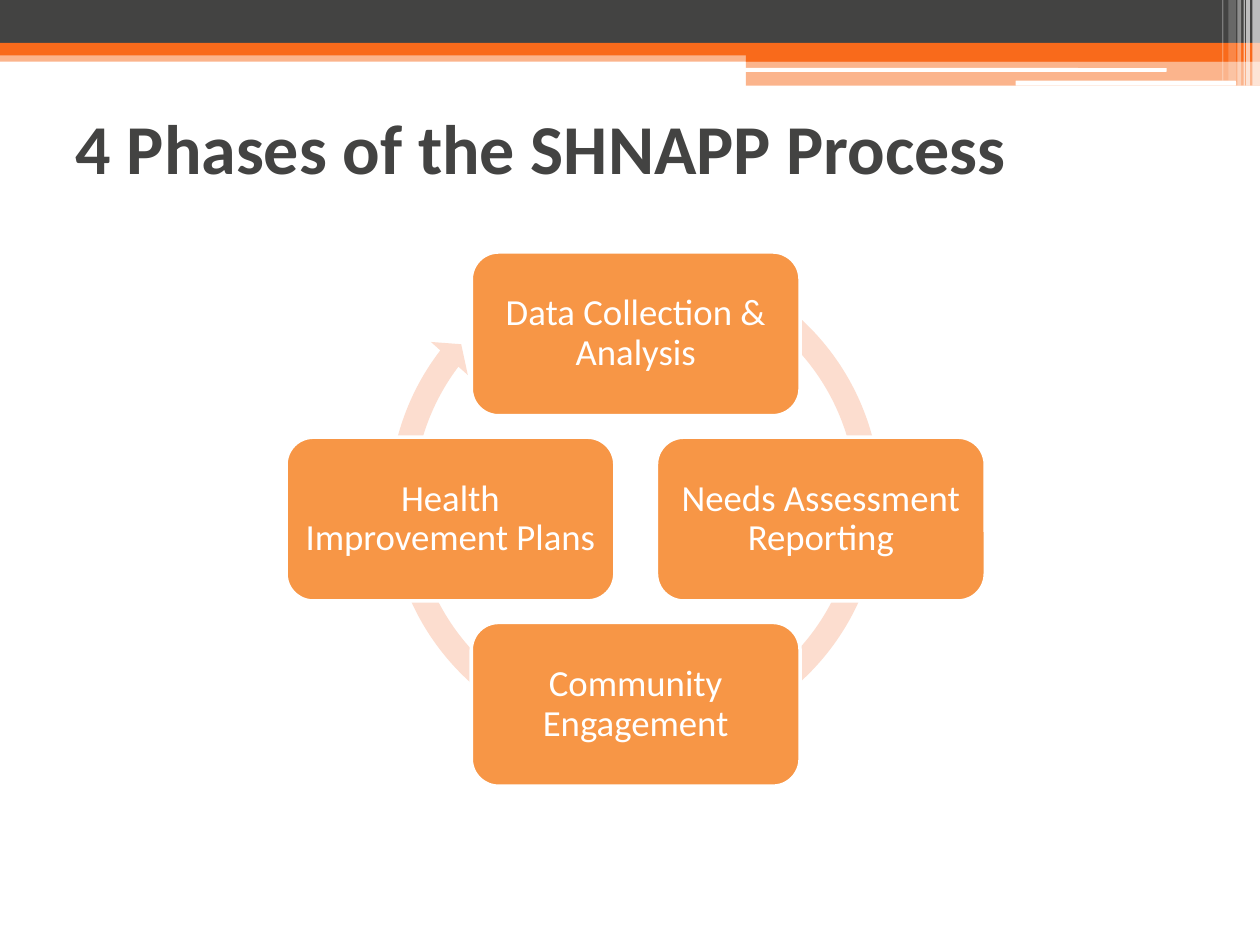
from dataclasses import dataclass

from lxml import etree
from pptx import Presentation
from pptx.dml.color import RGBColor
from pptx.enum.shapes import MSO_SHAPE
from pptx.enum.text import MSO_ANCHOR, PP_ALIGN
from pptx.oxml.ns import qn
from pptx.util import Inches, Pt

RECTANGLE = MSO_SHAPE.RECTANGLE
ROUNDED = MSO_SHAPE.ROUNDED_RECTANGLE
CIRCULAR_ARROW = MSO_SHAPE.CIRCULAR_ARROW
MIDDLE = MSO_ANCHOR.MIDDLE
LEFT, CENTER = PP_ALIGN.LEFT, PP_ALIGN.CENTER


@dataclass(frozen=True)
class Theme:
    font: str = "Calibri"
    dark: str = "434342"
    accent: str = "F96A1B"
    phase: str = "F79646"
    cycle: str = "FCDDCF"
    white: str = "FFFFFF"
    title_size: int = 40
    phase_size: int = 21


theme = Theme()


def color(value):
    return RGBColor.from_string(value)


def add_block(page, kind, place, fill, opacity=100):
    block = page.shapes.add_shape(kind, *[Inches(length) for length in place])
    block.shadow.inherit = False
    block.fill.solid()
    block.fill.fore_color.rgb = color(fill)
    block.line.fill.background()
    if opacity < 100:
        tone = block.fill._xPr.find(qn("a:solidFill"))[0]
        etree.SubElement(tone, qn("a:alpha"), val=str(opacity * 1000))
    return block


deck = Presentation()
deck.slide_width, deck.slide_height = Inches(10), Inches(7.5)
page = deck.slides.add_slide(deck.slide_layouts[5])

header_bands = [
    (RECTANGLE, (0, 0.4, 10, 0.09), theme.accent, 50),
    (RECTANGLE, (0, 0, 10, 0.34), theme.dark, 100),
    (RECTANGLE, (0, 0.34, 10, 0.1), theme.accent, 100),
    (RECTANGLE, (5.92, 0.39, 4.08, 0.1), theme.accent, 100),
    (RECTANGLE, (5.92, 0.48, 4.08, 0.2), theme.accent, 50),
    (ROUNDED, (5.91, 0.54, 3.35, 0.03), theme.white, 100),
    (ROUNDED, (8.06, 0.64, 1.75, 0.04), theme.white, 100),
]
for kind, place, fill, opacity in header_bands:
    add_block(page, kind, place, fill, opacity)

corner_stripes = [
    (9.94, 0.06, 0.68, 65),
    (9.89, 0.03, 0.68, 65),
    (9.87, 0.01, 0.68, 60),
    (9.82, 0.03, 0.68, 40),
    (9.75, 0.06, 0.64, 20),
    (9.7, 0.01, 0.64, 30),
]
for left, width, height, opacity in corner_stripes:
    add_block(page, RECTANGLE, (left, 0, width, height), theme.white, opacity)

title = page.shapes.title
title.left, title.top = Inches(0.5), Inches(0.58)
title.width, title.height = Inches(9), Inches(1.17)
title.text_frame.text = "4 Phases of the SHNAPP Process"
title.text_frame.vertical_anchor = MIDDLE
para = title.text_frame.paragraphs[0]
para.alignment = LEFT
para.font.name = theme.font
para.font.size = Pt(theme.title_size)
para.font.bold = True
para.font.color.rgb = color(theme.dark)

cycle = add_block(page, CIRCULAR_ARROW, (2.99, 1.92, 4.1, 4.1), theme.cycle)
for index, value in enumerate((0.047, 2.729, 130.408, 178.897, 0.048)):
    cycle.adjustments[index] = value

phase_width, phase_height = 2.61, 1.3
center_left, center_top, step = 3.74, 3.47, 1.47
phases = [
    ("Data Collection & Analysis", 0, -1),
    ("Needs Assessment Reporting", 1, 0),
    ("Community Engagement", 0, 1),
    ("Health Improvement Plans", -1, 0),
]
for label, across, down in phases:
    place = (center_left + across * step, center_top + down * step, phase_width, phase_height)
    box = add_block(page, ROUNDED, place, theme.phase)
    box.line.color.rgb = color(theme.white)
    box.line.width = Pt(2)
    frame = box.text_frame
    frame.text = label
    frame.word_wrap = True
    frame.vertical_anchor = MIDDLE
    frame.margin_left = frame.margin_right = Inches(0.09)
    frame.margin_top = frame.margin_bottom = Inches(0.09)
    para = frame.paragraphs[0]
    para.alignment = CENTER
    para.line_spacing = 0.9
    para.font.name = theme.font
    para.font.size = Pt(theme.phase_size)
    para.font.color.rgb = color(theme.white)

deck.save("out.pptx")
